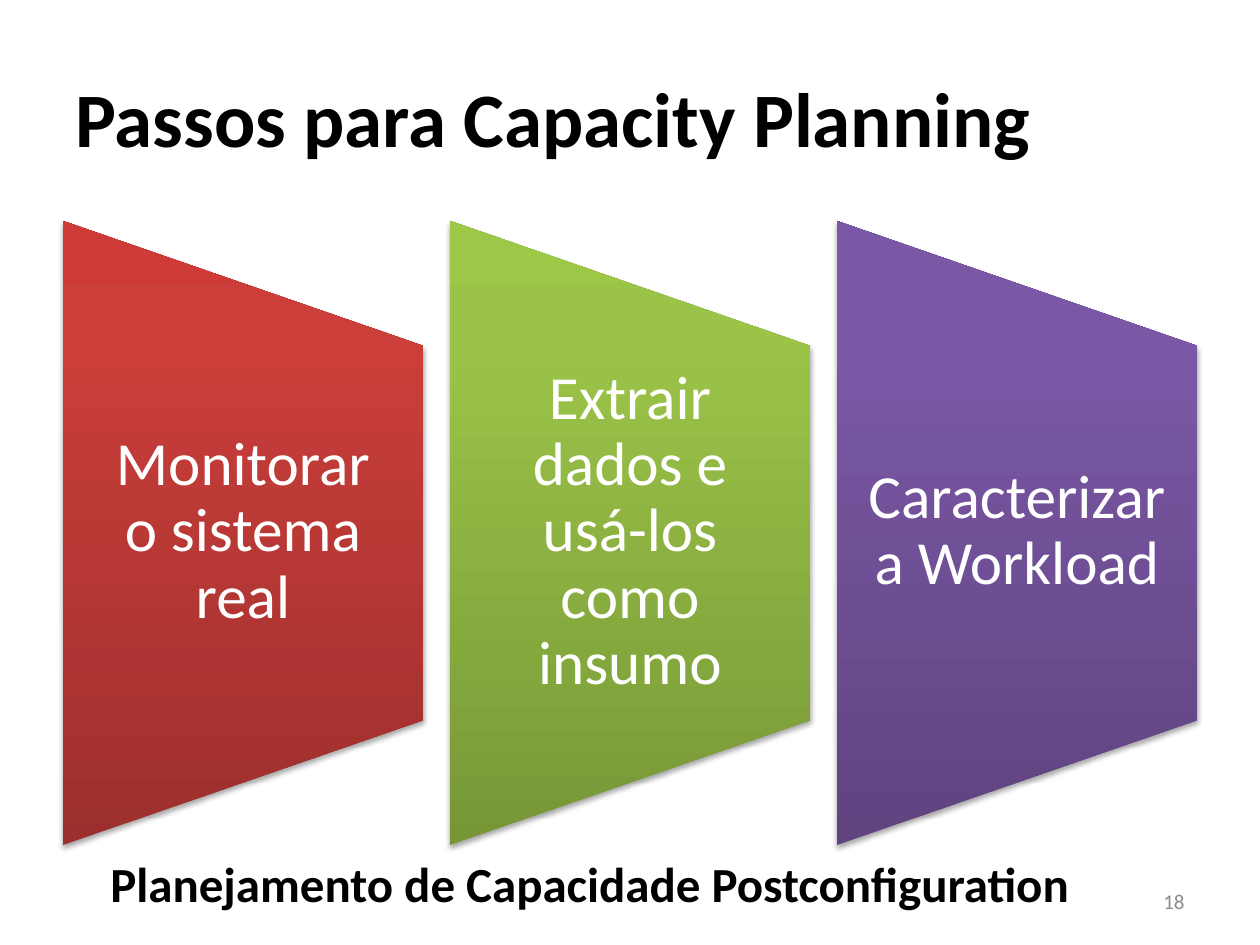
from lxml.etree import SubElement
from pptx import Presentation
from pptx.dml.color import RGBColor
from pptx.enum.shapes import MSO_SHAPE
from pptx.enum.text import MSO_ANCHOR, PP_ALIGN
from pptx.oxml.ns import qn
from pptx.util import Emu, Pt

SCALE = 914400 / 126
COLORS = {"ink": "000000", "white": "FFFFFF", "gray": "8C8C8C"}
STEPS = [
    ("Monitorar o sistema real", ("9C2F2D", "CB3E3A", "CE3B37")),
    ("Extrair dados e usá-los como insumo", ("779737", "9BC348", "9DC746")),
    ("Caracterizar a Workload", ("5F4480", "7B58A6", "7C57A8")),
]
STOPS = (0, 80000, 100000)
LEFT, TOP, WIDTH, HEIGHT, PITCH = 63, 221, 360, 624, 387


def px(*sizes):
    return [Emu(round(size * SCALE)) for size in sizes]


def add_text(shapes, text, box, size, color, bold=False,
             align=PP_ALIGN.LEFT, frame=None, spacing=None):
    body = shapes.add_textbox(*px(*box)).text_frame
    values = {"word_wrap": True, "vertical_anchor": MSO_ANCHOR.MIDDLE}
    for name, value in (values | (frame or {})).items():
        setattr(body, name, value)
    para = body.paragraphs[0]
    para.alignment = align
    para.line_spacing = spacing
    run = para.add_run()
    run.text = text
    style = {"name": "Calibri", "size": Pt(size), "bold": bold}
    for name, value in style.items():
        setattr(run.font, name, value)
    run.font.color.rgb = RGBColor.from_string(COLORS[color])


def add_node(parent, tag, **attrs):
    return SubElement(parent, qn(tag), {key: str(val) for key, val in attrs.items()})


def add_fade(shape, colors):
    """Fill upward on the page, whatever the rotation of the shape."""
    shape.fill.background()
    props = shape._element.spPr
    fade = add_node(props, "a:gradFill", rotWithShape=0)
    stops = add_node(fade, "a:gsLst")
    for pos, color in zip(STOPS, colors):
        add_node(add_node(stops, "a:gs", pos=pos), "a:srgbClr", val=color)
    add_node(fade, "a:lin", ang=16200000, scaled=0)
    props.replace(props.find(qn("a:noFill")), fade)


def add_shadow(shape):
    shape.shadow.inherit = False
    effects = shape._element.spPr.find(qn("a:effectLst"))
    shade = add_node(effects, "a:outerShdw", blurRad=40000, dist=23000,
                     dir=5400000, rotWithShape=0)
    add_node(add_node(shade, "a:srgbClr", val=COLORS["ink"]), "a:alpha", val=35000)


def add_step(shapes, left, text, colors):
    # The shape is laid out flat around its centre, then turned upright.
    shift = (HEIGHT - WIDTH) // 2
    box = px(left - shift, TOP + shift, HEIGHT, WIDTH)
    shape = shapes.add_shape(MSO_SHAPE.FLOWCHART_MANUAL_OPERATION, *box)
    shape.rotation = 270
    add_fade(shape, colors)
    shape.line.fill.background()
    add_shadow(shape)
    side, none = px(30, 0)
    frame = {"margin_left": side, "margin_right": side,
             "margin_top": none, "margin_bottom": none}
    add_text(shapes, text, (left, TOP + 124, WIDTH, 374), 35, "white",
             align=PP_ALIGN.CENTER, frame=frame, spacing=0.9)


def main():
    deck = Presentation()
    deck.slide_width, deck.slide_height = px(1260, 945)
    shapes = deck.slides.add_slide(deck.slide_layouts[6]).shapes
    add_text(shapes, "Passos para Capacity Planning", (63, 38, 1134, 158),
             44, "ink", bold=True)
    group = shapes.add_group_shape()
    for index, (text, colors) in enumerate(STEPS):
        add_step(group.shapes, LEFT + index * PITCH, text, colors)
    add_text(shapes, "18", (903, 876, 294, 50), 12, "gray", align=PP_ALIGN.RIGHT)
    add_text(shapes, "Planejamento de Capacidade Postconfiguration",
             (98, 847, 1014, 72), 28, "ink", bold=True,
             frame={"vertical_anchor": MSO_ANCHOR.TOP})
    deck.save("out.pptx")


if __name__ == "__main__":
    main()
